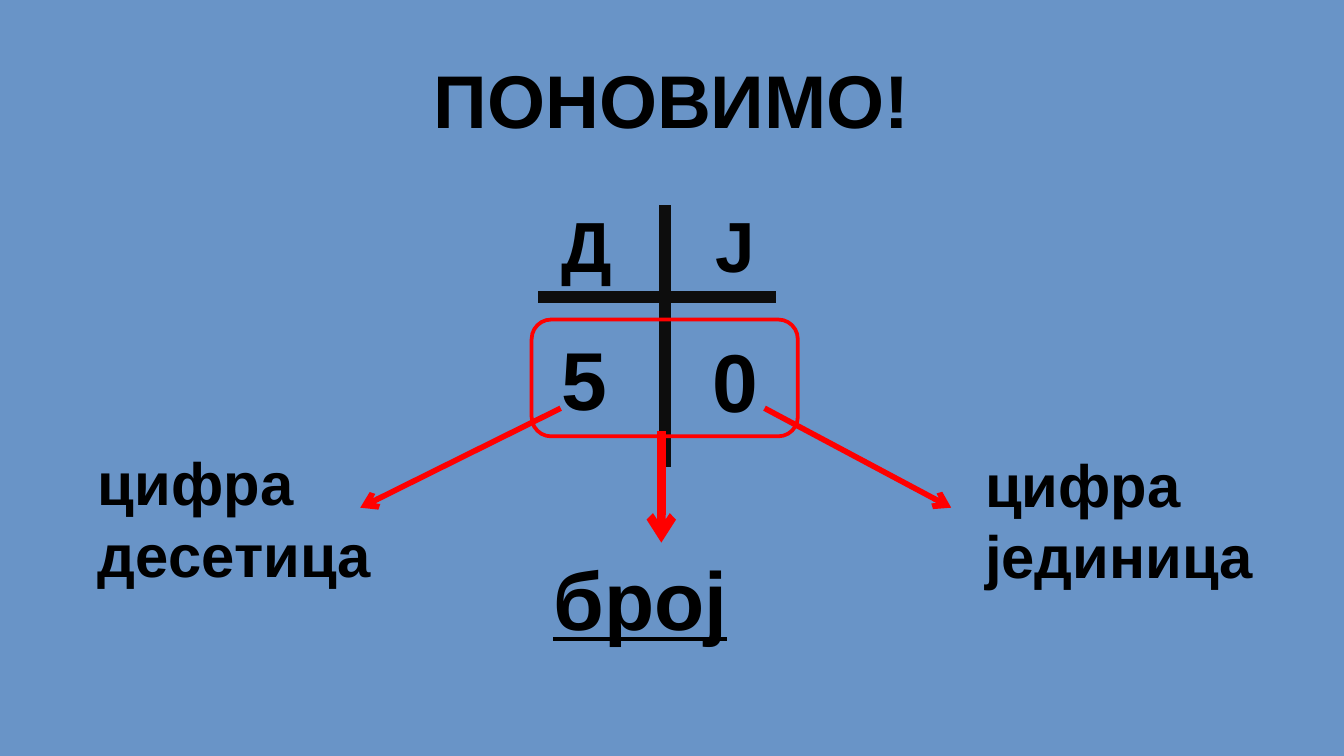
from typing import NamedTuple

from lxml import etree
from pptx import Presentation
from pptx.dml.color import RGBColor
from pptx.enum.shapes import MSO_CONNECTOR, MSO_SHAPE
from pptx.enum.text import MSO_ANCHOR, MSO_AUTO_SIZE, PP_ALIGN
from pptx.oxml.ns import qn
from pptx.util import Pt

BLUE = RGBColor(0x69, 0x94, 0xC7)
BLACK = RGBColor(0x00, 0x00, 0x00)
CHARCOAL = RGBColor(0x0D, 0x0D, 0x0D)
RED = RGBColor(0xFF, 0x00, 0x00)

FONT = "Arial"
LEFT, CENTER = PP_ALIGN.LEFT, PP_ALIGN.CENTER
TOP, MIDDLE = MSO_ANCHOR.TOP, MSO_ANCHOR.MIDDLE
GROW, FIXED = MSO_AUTO_SIZE.SHAPE_TO_FIT_TEXT, MSO_AUTO_SIZE.NONE
STRAIGHT = MSO_CONNECTOR.STRAIGHT
ROUNDED = MSO_SHAPE.ROUNDED_RECTANGLE


class Area(NamedTuple):
    left: float
    top: float
    width: float
    height: float


class Stroke(NamedTuple):
    start: tuple[float, float]
    end: tuple[float, float]
    color: RGBColor
    weight: float
    arrow: bool = False


AXES = [
    Stroke((288.5, 159.1), (415.5, 159.1), CHARCOAL, 6),
    Stroke((356.3, 110), (356.3, 250), CHARCOAL, 6),
]
ARROWS = [
    Stroke((300.4, 218.7), (193, 272), RED, 3, True),
    Stroke((354.3, 231), (354.3, 290.7), RED, 4.5, True),
    Stroke((409.6, 218.7), (509.6, 272), RED, 3, True),
]


def add_text(page, text: str, area: Area, *, size: float, align=LEFT,
             anchor=TOP, fit=GROW, wrap=False, underline=False) -> None:
    box = page.shapes.add_textbox(*map(Pt, area))
    frame = box.text_frame
    frame.text = text
    frame.word_wrap = wrap
    frame.auto_size = fit
    frame.vertical_anchor = anchor
    for para in frame.paragraphs:
        para.alignment = align
        for span in para.runs:
            font = span.font
            font.name, font.size, font.bold = FONT, Pt(size), True
            font.color.rgb = BLACK
            if underline:
                font.underline = True


def add_stroke(page, stroke: Stroke) -> None:
    connector = page.shapes.add_connector(
        STRAIGHT, *map(Pt, stroke.start + stroke.end))
    connector.line.color.rgb = stroke.color
    connector.line.width = Pt(stroke.weight)
    if stroke.arrow:
        outline = connector.line._get_or_add_ln()
        etree.SubElement(outline, qn("a:tailEnd"), type="arrow")
    etree.SubElement(connector._element.spPr, qn("a:effectLst"))


def add_frame(page, area: Area) -> None:
    frame = page.shapes.add_shape(ROUNDED, *map(Pt, area))
    frame.shadow.inherit = False
    frame.fill.background()
    frame.line.color.rgb = RED
    frame.line.width = Pt(2)


def main() -> None:
    deck = Presentation()
    deck.slide_width, deck.slide_height = Pt(720), Pt(405)
    page = deck.slides.add_slide(deck.slide_layouts[6])
    page.background.fill.solid()
    page.background.fill.fore_color.rgb = BLUE

    add_text(page, "ПОНОВИМО!", Area(214, 13.7, 291.6, 77.8), size=40,
             align=CENTER, anchor=MIDDLE, fit=FIXED, wrap=True)
    for axis in AXES:
        add_stroke(page, axis)

    add_text(page, "Д", Area(293.7, 104.4, 41.8, 53.3), size=38, align=CENTER)
    add_text(page, "Ј", Area(373, 104.4, 41.8, 53.3), size=38,
             align=CENTER, wrap=True)
    add_text(page, "5", Area(293.7, 172.3, 39.6, 60.5), size=44)
    add_text(page, "0", Area(374.4, 173.3, 39.6, 60.5), size=44)
    add_frame(page, Area(284.8, 171.2, 142.6, 62.6))

    add_text(page, "број", Area(288.7, 290.2, 108.7, 60.5), size=44,
             align=CENTER, underline=True)
    add_text(page, "цифра\nјединица", Area(520.6, 236.2, 159.1, 85), size=32)
    add_text(page, "цифра\nдесетица", Area(45.4, 235.4, 188.6, 85), size=32,
             wrap=True)
    for arrow in ARROWS:
        add_stroke(page, arrow)

    deck.save("out.pptx")


if __name__ == "__main__":
    main()
